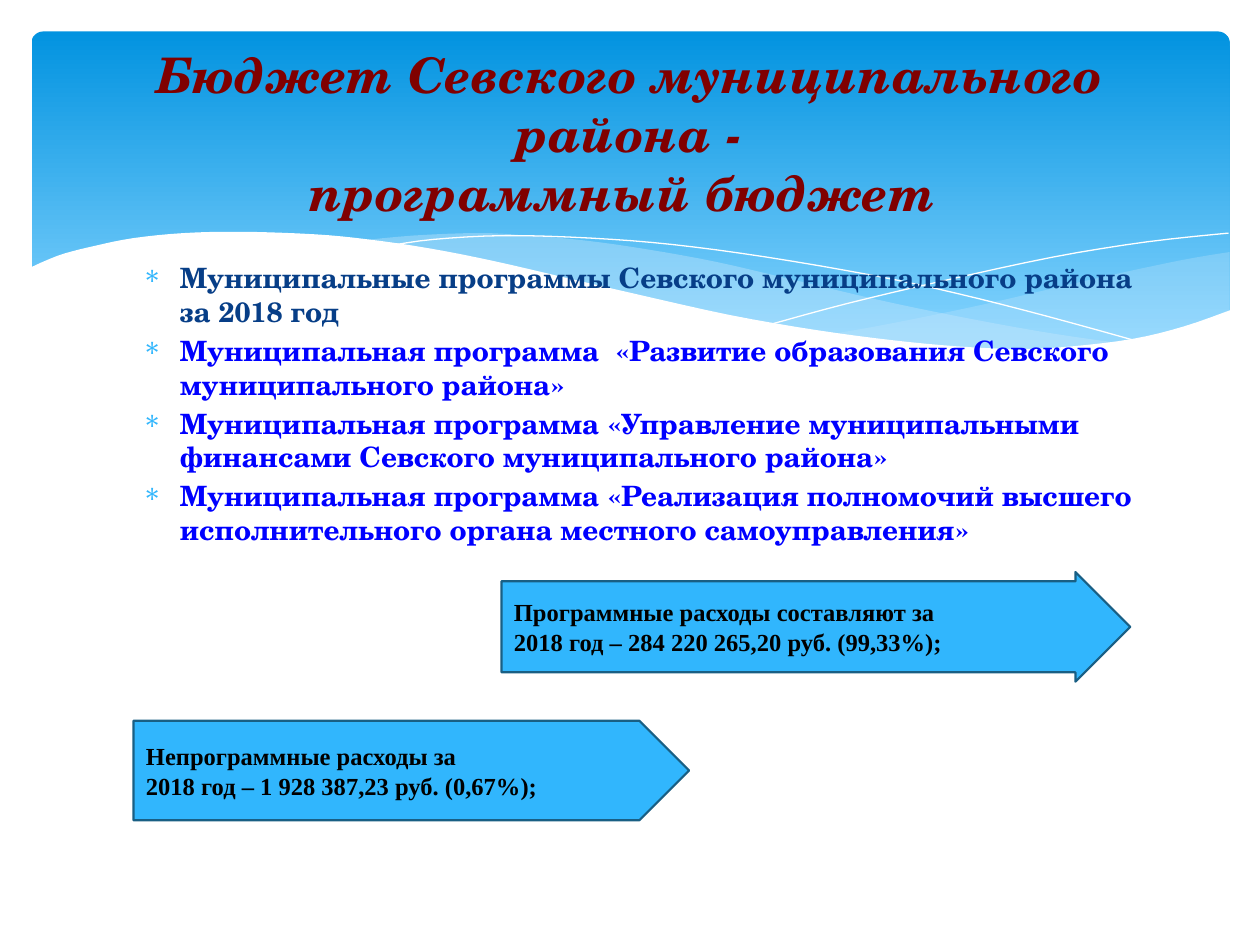
from dataclasses import dataclass

from lxml.etree import SubElement
from pptx import Presentation
from pptx.dml.color import RGBColor
from pptx.enum.shapes import MSO_SHAPE
from pptx.enum.text import MSO_ANCHOR, PP_ALIGN
from pptx.oxml.ns import qn
from pptx.util import Inches, Pt


@dataclass(frozen=True)
class Theme:
    sky_top: str = "0293E0"
    sky_bottom: str = "83D3FE"
    veil: str = "C6E7FC"
    white: str = "FFFFFF"
    accent: str = "31B6FD"
    arrow_edge: str = "195F84"
    title: str = "800000"
    heading: str = "073E87"
    program: str = "0000FF"
    black: str = "000000"
    display_font: str = "TeX Gyre Schola"
    arrow_font: str = "Times New Roman"
    title_size: int = 28
    body_size: int = 16
    arrow_size: int = 14


THEME = Theme()

# Wave edges, as points in inches that a smooth curve passes through
RIGHT_VEIL_TOP = [(9.76, 2), (9.35, 2.07), (8.61, 2.23), (7.79, 2.42), (7.06, 2.57), (6.61, 2.65)]
RIGHT_VEIL_BOTTOM = [(6.61, 2.65), (7.05, 2.71), (7.57, 2.76), (8.03, 2.78), (8.54, 2.76),
                     (8.97, 2.7), (9.42, 2.59), (9.76, 2.47)]
LONG_VEIL_TOP = [(8.93, 2.73), (8.37, 2.65), (7.75, 2.54), (7.06, 2.4), (6.29, 2.22), (5.69, 2.08),
                 (5.14, 1.98), (4.65, 1.91), (4.2, 1.87), (3.8, 1.85), (3.28, 1.87), (2.86, 1.91)]
LONG_VEIL_BOTTOM = [(2.86, 1.91), (3.42, 1.99), (4.04, 2.11), (4.49, 2.22), (5.3, 2.4), (6.01, 2.55),
                    (6.65, 2.66), (7.22, 2.74), (7.73, 2.77), (8.18, 2.78), (8.57, 2.77), (8.93, 2.73)]
FALLING_LINE = [(3.09, 1.95), (3.44, 1.9), (4.01, 1.87), (4.69, 1.89), (5.33, 1.94), (6.08, 2.04),
                (6.95, 2.19), (7.6, 2.33), (8.31, 2.51), (9.07, 2.72)]
RISING_LINE = [(6.13, 2.57), (6.72, 2.41), (7.48, 2.23), (8.36, 2.04), (9.1, 1.92), (9.75, 1.85)]
WHITE_EDGE = [(9.77, 2.46), (9.4, 2.59), (8.99, 2.69), (8.5, 2.75), (8.09, 2.77), (7.61, 2.75),
              (7.08, 2.7), (6.48, 2.62), (5.79, 2.5), (5.03, 2.33), (4.47, 2.2), (3.91, 2.07),
              (3.4, 1.97), (2.92, 1.9), (2.5, 1.86), (1.93, 1.84), (1.46, 1.85), (1.06, 1.89),
              (0.76, 1.95), (0.52, 2.01), (0.36, 2.07), (0.23, 2.13)]


def color(code):
    return RGBColor.from_string(code)


def smooth_curve(points, steps=4):
    """Catmull-Rom curve through the points."""
    ends = [points[0], *points, points[-1]]
    curve = [points[0]]
    for a, b, c, d in zip(ends, ends[1:], ends[2:], ends[3:]):
        for step in range(1, steps + 1):
            t = step / steps
            curve.append(tuple(
                (2 * q + (r - p) * t + (2 * p - 5 * q + 4 * r - s) * t ** 2
                 + (3 * q - p - 3 * r + s) * t ** 3) / 2
                for p, q, r, s in zip(a, b, c, d)))
    return curve


def add_outline(page, points, close):
    corners = [(Inches(x), Inches(y)) for x, y in points]
    builder = page.shapes.build_freeform(*corners[0])
    builder.add_line_segments(corners[1:], close=close)
    shape = builder.convert_to_shape()
    shape.shadow.inherit = False
    return shape


def add_wave(page, points, code, opacity=100):
    wave = add_outline(page, points, close=True)
    wave.fill.solid()
    wave.fill.fore_color.rgb = color(code)
    wave.line.fill.background()
    if opacity < 100:
        tint = wave.fill._xPr.find(".//" + qn("a:srgbClr"))
        SubElement(tint, qn("a:alpha"), val=str(opacity * 1000))


def add_wave_line(page, points):
    line = add_outline(page, smooth_curve(points), close=False)
    line.fill.background()
    line.line.color.rgb = color(THEME.white)
    line.line.width = Pt(0)


def add_backdrop(page, left, top, width, height):
    # Gradient sky
    sky = page.shapes.add_shape(MSO_SHAPE.ROUNDED_RECTANGLE, left, top, width, height)
    sky.adjustments[0] = 0.034
    sky.shadow.inherit = False
    sky.line.fill.background()
    sky.fill.gradient()
    sky.fill.gradient_angle = 270
    stops = zip(sky.fill.gradient_stops, (THEME.sky_top, THEME.sky_bottom), (0, 0.9))
    for stop, code, position in stops:
        stop.color.rgb = color(code)
        stop.position = position

    # Translucent veils, thin lines and the white wave
    add_wave(page, smooth_curve(RIGHT_VEIL_TOP) + smooth_curve(RIGHT_VEIL_BOTTOM), THEME.veil, 29)
    add_wave(page, smooth_curve(LONG_VEIL_TOP) + smooth_curve(LONG_VEIL_BOTTOM), THEME.veil, 40)
    add_wave_line(page, FALLING_LINE)
    add_wave_line(page, RISING_LINE)
    add_wave(page, smooth_curve(WHITE_EDGE) + [(0.23, 3.29), (9.77, 3.29)], THEME.white)


def style_spans(para, font_name, size, code, italic=False):
    for span in para.runs:
        span.font.name = font_name
        span.font.size = Pt(size)
        span.font.bold = True
        span.font.italic = italic
        span.font.color.rgb = color(code)


def add_title(page, text, left, top, width, height):
    frame = page.shapes.add_textbox(left, top, width, height).text_frame
    frame.word_wrap = True
    frame.vertical_anchor = MSO_ANCHOR.MIDDLE
    para = frame.paragraphs[0]
    para.text = text
    para.alignment = PP_ALIGN.CENTER
    style_spans(para, THEME.display_font, THEME.title_size, THEME.title, italic=True)
    for span in para.runs:
        span.font._element.set("spc", "30")


def add_programs(page, items, left, top, width, height):
    frame = page.shapes.add_textbox(left, top, width, height).text_frame
    frame.word_wrap = True
    for index, item in enumerate(items):
        para = frame.add_paragraph() if index else frame.paragraphs[0]
        para.text = item
        props = para._p.get_or_add_pPr()
        props.set("marL", str(Inches(0.3)))
        props.set("indent", str(-Inches(0.3)))
        if index:
            para.space_before = Pt(3.2)
        bullet_color = SubElement(props, qn("a:buClr"))
        SubElement(bullet_color, qn("a:srgbClr"), val=THEME.accent)
        SubElement(props, qn("a:buChar"), char="∗")
        code = THEME.program if index else THEME.heading
        style_spans(para, THEME.display_font, THEME.body_size, code)


def add_expense_arrow(page, text, shaft, left, top, width, height):
    arrow = page.shapes.add_shape(MSO_SHAPE.RIGHT_ARROW, left, top, width, height)
    arrow.adjustments[0] = shaft
    arrow.adjustments[1] = 0.5
    arrow.shadow.inherit = False
    arrow.fill.solid()
    arrow.fill.fore_color.rgb = color(THEME.accent)
    arrow.line.color.rgb = color(THEME.arrow_edge)
    arrow.line.width = Pt(1.25)
    frame = arrow.text_frame
    frame.text = text
    frame.word_wrap = True
    frame.vertical_anchor = MSO_ANCHOR.MIDDLE
    for para in frame.paragraphs:
        para.alignment = PP_ALIGN.LEFT
        style_spans(para, THEME.arrow_font, THEME.arrow_size, THEME.black)


def main():
    deck = Presentation()
    deck.slide_width, deck.slide_height = Inches(10), Inches(7.5)
    page = deck.slides.add_slide(deck.slide_layouts[6])

    add_backdrop(page, Inches(0.25), Inches(0.25), Inches(9.51), Inches(2.7))
    add_programs(page, [
        "Муниципальные программы Севского муниципального района за 2018 год",
        "Муниципальная программа  «Развитие образования Севского муниципального района»",
        "Муниципальная программа «Управление муниципальными финансами Севского муниципального района»",
        "Муниципальная программа «Реализация полномочий высшего исполнительного органа местного самоуправления»",
    ], Inches(1.03), Inches(2.02), Inches(8.1), Inches(5.23))
    add_title(page, "Бюджет Севского муниципального района -\vпрограммный бюджет ",
              Inches(0.5), Inches(0.37), Inches(9), Inches(1.37))
    add_expense_arrow(page, "Программные расходы составляют за\n2018 год – 284 220 265,20 руб. (99,33%);",
                      0.83, Inches(3.98), Inches(4.54), Inches(4.99), Inches(0.87))
    add_expense_arrow(page, "Непрограммные расходы за\n2018 год – 1 928 387,23 руб. (0,67%);",
                      1, Inches(1.06), Inches(5.72), Inches(4.41), Inches(0.79))
    deck.save("out.pptx")


if __name__ == "__main__":
    main()
